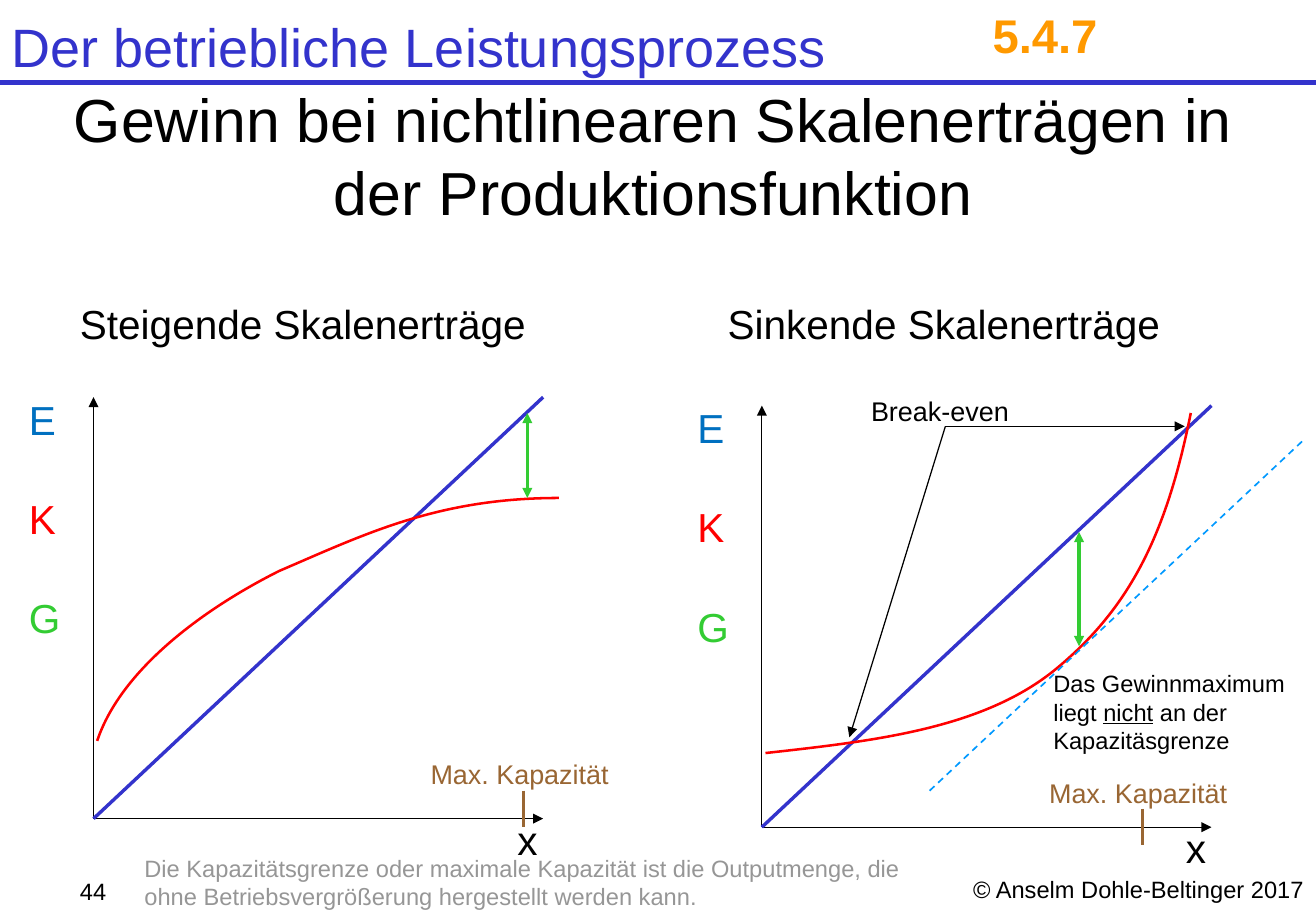
import pptx
import pptx.dml.color
import pptx.enum.dml
import pptx.enum.shapes
import pptx.enum.text
import pptx.oxml
import pptx.oxml.ns
import pptx.util

BLACK = pptx.dml.color.RGBColor(0x00, 0x00, 0x00)
INDIGO = pptx.dml.color.RGBColor(0x33, 0x33, 0xCC)
BLUE = pptx.dml.color.RGBColor(0x00, 0x70, 0xC0)
SKY = pptx.dml.color.RGBColor(0x00, 0x99, 0xFF)
RED = pptx.dml.color.RGBColor(0xFF, 0x00, 0x00)
GREEN = pptx.dml.color.RGBColor(0x33, 0xCC, 0x33)
BROWN = pptx.dml.color.RGBColor(0x99, 0x66, 0x33)
ORANGE = pptx.dml.color.RGBColor(0xFF, 0x99, 0x00)
GRAY = pptx.dml.color.RGBColor(0x96, 0x96, 0x96)

LEFT = pptx.enum.text.PP_ALIGN.LEFT
CENTER = pptx.enum.text.PP_ALIGN.CENTER
RIGHT = pptx.enum.text.PP_ALIGN.RIGHT
TOP = pptx.enum.text.MSO_ANCHOR.TOP
MIDDLE = pptx.enum.text.MSO_ANCHOR.MIDDLE

# Grid: ten columns and ten rows to the inch
CELL = pptx.util.Inches(0.1)
COLUMNS, ROWS = 108.3, 75

deck = pptx.Presentation()
deck.slide_width = round(COLUMNS * CELL)
deck.slide_height = round(ROWS * CELL)
page = deck.slides.add_slide(deck.slide_layouts[6])


def add_text(area, paragraphs, size, align=LEFT, anchor=TOP, before=0):
    """Each paragraph is a list of (text, colour, style) runs."""
    box = page.shapes.add_textbox(*(round(cells * CELL) for cells in area))
    frame = box.text_frame
    frame.word_wrap = True
    frame.vertical_anchor = anchor
    for number, runs in enumerate(paragraphs):
        para = frame.paragraphs[0] if number == 0 else frame.add_paragraph()
        para.alignment = align
        if number or len(paragraphs) == 1:
            para.space_before = pptx.util.Pt(before)
        for text, color, style in runs:
            span = para.add_run()
            span.text = text
            span.font.name = "Arial"
            span.font.size = pptx.util.Pt(size)
            span.font.color.rgb = color
            span.font.bold = style == "bold"
            span.font.underline = style == "underline"


def add_line(start, end, color, width, ends=()):
    line = page.shapes.add_connector(
        pptx.enum.shapes.MSO_CONNECTOR.STRAIGHT,
        *(round(cells * CELL) for cells in (*start, *end)))
    line.line.color.rgb = color
    line.line.width = pptx.util.Pt(width)
    outline = line.line._get_or_add_ln()
    for end_name in ends:
        arrow = pptx.oxml.parse_xml(
            f'<a:{end_name} {pptx.oxml.ns.nsdecls("a")} type="triangle"/>')
        outline.append(arrow)
    line._element.spPr.append(
        pptx.oxml.parse_xml(f'<a:effectLst {pptx.oxml.ns.nsdecls("a")}/>'))
    return line


# Header and title
add_text((0, 0, COLUMNS, 7.6),
         [[("Der betriebliche Leistungsprozess", INDIGO, None)]],
         32, anchor=MIDDLE, before=6)
add_line((0, 6.8), (COLUMNS, 6.8), INDIGO, 3)
add_text((80.7, 0, 22.7, 5.7), [[("5.4.7", ORANGE, "bold")]], 28, before=5)
add_text((4.7, 7.6, 98.1, 10.2),
         [[("Gewinn bei nichtlinearen Skalenerträgen in der Produktionsfunktion",
            BLACK, None)]], 36, CENTER, MIDDLE)

# Both diagrams: heading, axes, revenue line, cost curve, capacity limit
# The cost curve is a start point followed by two Bézier segments
diagrams = [
    ("Steigende Skalenerträge", 5.6, (7.7, 67.4), (43.1, 65.1),
     [(7.8, 60.7), (10.3, 55.3), (16.6, 50.5), (23.1, 47.2),
      (29.5, 43.9), (36.2, 41.1), (46.4, 40.8)]),
    ("Sinkende Skalenerträge", 58.9, (62.7, 68.1), (94, 66.6),
     [(62.7, 62.4), (72, 61.1), (81.3, 59.7), (87.2, 54.9),
      (93.1, 50.1), (96.3, 43.7), (98.1, 33.6)]),
]
AXIS_WIDTH, AXIS_HEIGHT = 37, 34.7
for heading, heading_x, (x, y), (limit_x, limit_y), cost in diagrams:
    add_text((heading_x, 24.1, 39.2, 5), [[(heading, BLACK, None)]], 24)
    add_line((x, y), (x, y - AXIS_HEIGHT), BLACK, 0.75, ["tailEnd"])
    add_line((x, y), (x + AXIS_WIDTH, y), BLACK, 0.75, ["tailEnd"])
    add_text((x - 6.3, y - 35.4, 4.2, 21),
             [[("E", BLUE, None)], [("K", RED, None)], [("G", GREEN, None)]],
             24, before=30)
    add_text((x + 33.9, y - 0.8, 3.9, 5), [[("x", BLACK, None)]], 24)
    add_line((x, y), (x + AXIS_WIDTH, y - AXIS_HEIGHT), INDIGO, 2)

    builder = page.shapes.build_freeform(*cost[0], scale=CELL)
    builder.add_line_segments(cost[1:], close=False)
    curve = builder.convert_to_shape()
    curve.shadow.inherit = False
    curve.fill.background()
    curve.line.color.rgb = RED
    curve.line.width = pptx.util.Pt(1.5)
    # Every three line targets become one Bézier segment
    steps = list(curve._element.iter(pptx.oxml.ns.qn("a:lnTo")))
    outline = steps[0].getparent()
    for first in range(0, len(steps), 3):
        segment = pptx.oxml.parse_xml(
            f'<a:cubicBezTo {pptx.oxml.ns.nsdecls("a")}/>')
        outline.append(segment)
        for step in steps[first:first + 3]:
            segment.append(step[0])
            outline.remove(step)

    add_line((limit_x, limit_y), (limit_x, limit_y + 3), BROWN, 1.5)
    add_text((limit_x - 8.65, limit_y - 3.2, 20.5, 3.7),
             [[("Max. Kapazität", BROWN, None)]], 16)

# Largest profit in each diagram
both_ends = ["headEnd", "tailEnd"]
add_line((43.4, 34), (43.4, 41), GREEN, 1.75, both_ends)
add_line((88.8, 53.2), (88.8, 43.8), GREEN, 2, both_ends)
tangent = add_line((76.5, 65.1), (107.2, 36.3), SKY, 1)
tangent.line.dash_style = pptx.enum.dml.MSO_LINE.DASH
add_text((85.7, 54.6, 21.3, 8.1),
         [[("Das Gewinnmaximum liegt ", BLACK, None),
           ("nicht", BLACK, "underline"),
           (" an der Kapazitäsgrenze", BLACK, None)]], 14)

# Break-even points
add_text((70.7, 32, 16.5, 3.7), [[("Break-even", BLACK, None)]], 16)
for point in [(97.5, 35.1), (69.9, 60.7)]:
    add_line((77.8, 35.1), point, BLACK, 0.75, ["tailEnd"])

# Footer
add_text((10.9, 69.8, 68.4, 5.2),
         [[("Die Kapazitätsgrenze oder maximale Kapazität ist die Outputmenge, "
            "die ohne Betriebsvergrößerung hergestellt werden kann.",
            GRAY, None)]], 14)
add_text((5.6, 71.7, 5, 3.3), [[("44", BLACK, None)]], 14, anchor=MIDDLE)
add_text((62.3, 71.4, 46, 3.6),
         [[("© Anselm Dohle-Beltinger 2017", BLACK, None)]],
         14, RIGHT, MIDDLE)

deck.save("out.pptx")
